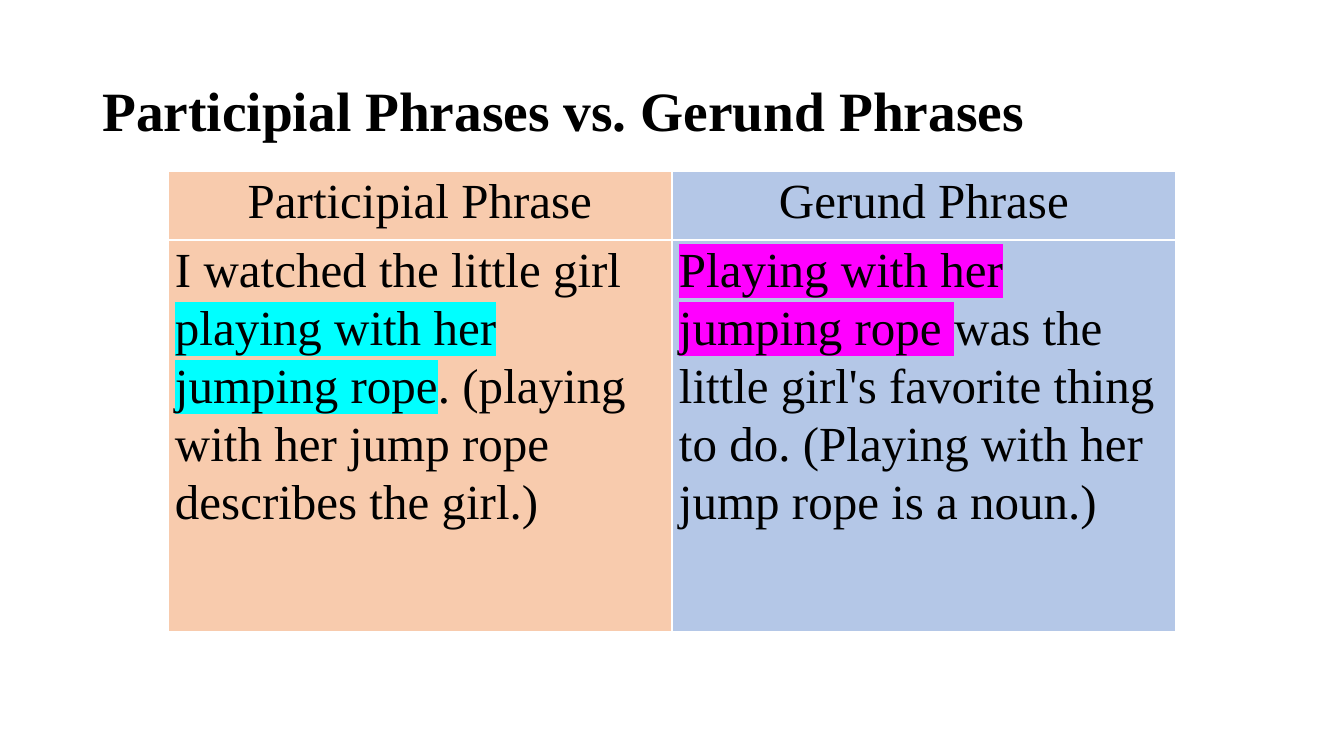
from lxml.etree import SubElement
from pptx import Presentation
from pptx.dml.color import RGBColor
from pptx.enum.text import MSO_ANCHOR as Anchor, PP_ALIGN as Align
from pptx.oxml.ns import qn
from pptx.util import Pt

TITLE = "Participial Phrases vs. Gerund Phrases"
BLACK = RGBColor(0x00, 0x00, 0x00)
WHITE = RGBColor(0xFF, 0xFF, 0xFF)
PEACH = RGBColor(0xF8, 0xCB, 0xAD)
BLUE = RGBColor(0xB4, 0xC7, 0xE7)
CYAN = RGBColor(0x00, 0xFF, 0xFF)
MAGENTA = RGBColor(0xFF, 0x00, 0xFF)
FONT = "Times New Roman"

COLUMNS = [
    (PEACH, "Participial Phrase", [
        ("I watched the little girl ", None),
        ("playing with her jumping rope", CYAN),
        (". (playing with her jump rope describes the girl.)", None),
    ]),
    (BLUE, "Gerund Phrase", [
        ("Playing with her jumping rope ", MAGENTA),
        ("was the little girl's favorite thing to do. "
         "(Playing with her jump rope is a noun.)", None),
    ]),
]
ROW_HEIGHTS = (49, 280)
COLUMN_WIDTH = 360


def add_color(parent, color):
    SubElement(parent, qn("a:srgbClr"), val=str(color))


def add_span(para, text, size, bold=False, highlight=None):
    span = para.add_run()
    span.text = text
    span.font.size = Pt(size)
    span.font.bold = bold
    span.font.color.rgb = BLACK
    if highlight is not None:
        add_color(SubElement(span.font._element, qn("a:highlight")), highlight)
    span.font.name = FONT


def fill_cell(cell, color, spans, align):
    cell.margin_left = cell.margin_right = Pt(5)
    cell.margin_top = cell.margin_bottom = Pt(0)
    for side in ("L", "R", "T", "B"):
        line = SubElement(cell._tc.get_or_add_tcPr(), qn(f"a:ln{side}"), w=str(Pt(1)))
        add_color(SubElement(line, qn("a:solidFill")), WHITE)
    cell.fill.solid()
    cell.fill.fore_color.rgb = color
    para = cell.text_frame.paragraphs[0]
    para.alignment = align
    para.line_spacing = 1.07
    for text, highlight in spans:
        add_span(para, text, 35, highlight=highlight)


deck = Presentation()
deck.slide_width, deck.slide_height = Pt(960), Pt(540)
page = deck.slides.add_slide(deck.slide_layouts[6])

box = page.shapes.add_textbox(Pt(66), Pt(29), Pt(828), Pt(104))
box.text_frame.word_wrap = True
box.text_frame.vertical_anchor = Anchor.MIDDLE
heading = box.text_frame.paragraphs[0]
heading.line_spacing = 0.9
add_span(heading, TITLE, 39.6, bold=True)

table = page.shapes.add_table(
    len(ROW_HEIGHTS), len(COLUMNS), Pt(120), Pt(122.5),
    Pt(COLUMN_WIDTH * len(COLUMNS)), Pt(sum(ROW_HEIGHTS))).table
table.first_row = table.horz_banding = False
for row, height in zip(table.rows, ROW_HEIGHTS):
    row.height = Pt(height)
for index, (color, name, example) in enumerate(COLUMNS):
    table.columns[index].width = Pt(COLUMN_WIDTH)
    fill_cell(table.cell(0, index), color, [(name, None)], Align.CENTER)
    fill_cell(table.cell(1, index), color, example, Align.LEFT)

deck.save("out.pptx")
